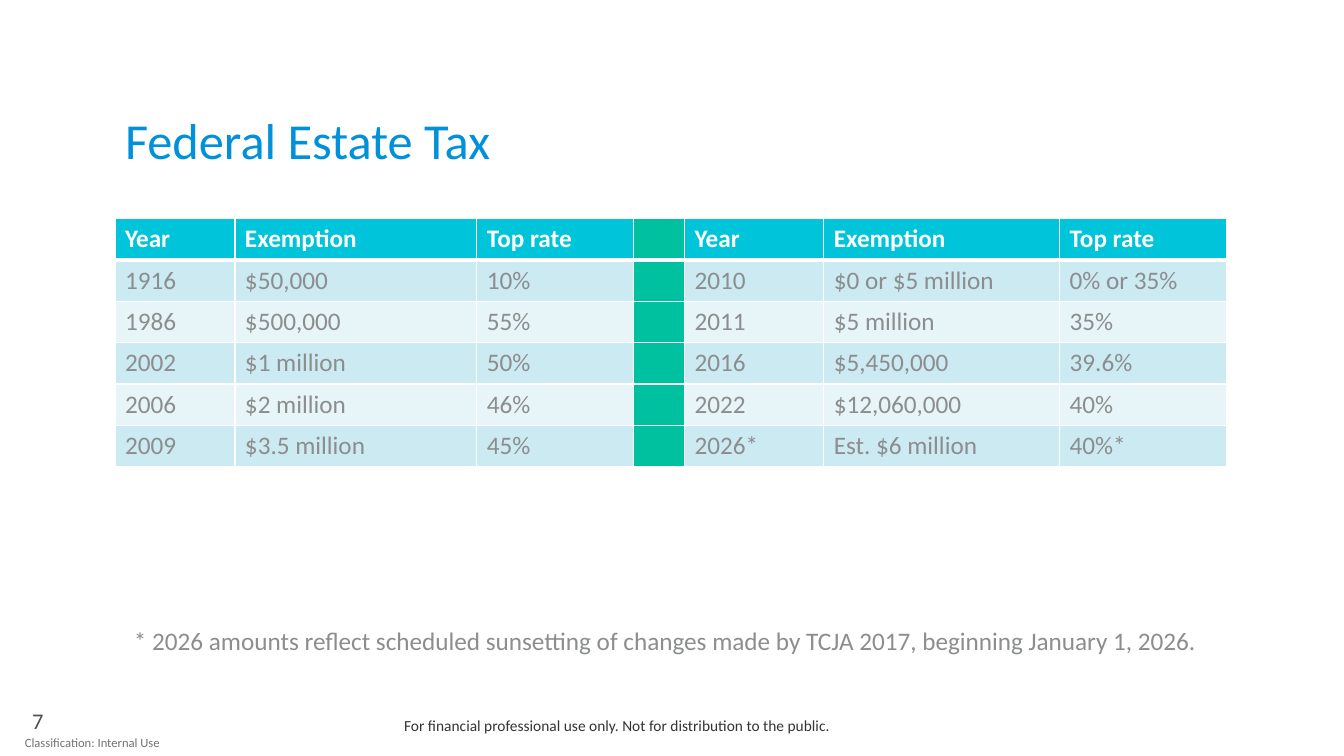
from dataclasses import dataclass

from lxml.etree import SubElement
from pptx import Presentation
from pptx.dml.color import RGBColor
from pptx.enum.text import MSO_ANCHOR as Anchor, MSO_AUTO_SIZE as AutoSize, PP_ALIGN as Align
from pptx.oxml.ns import qn
from pptx.util import Emu, Pt

EMU_PER_PX = 9144


def px(length: int) -> Emu:
    return Emu(length * EMU_PER_PX)


@dataclass(frozen=True)
class Theme:
    font: str = "Calibri"
    title: str = "0091DA"
    body: str = "8C8D8E"
    header_fill: str = "00C4D9"
    divider_fill: str = "00C19F"
    band_fills: tuple[str, str] = ("CCEAF1", "E7F5F8")
    white: str = "FFFFFF"
    page_number: str = "4D4E53"
    disclaimer: str = "333333"
    classification: str = "737373"
    title_size: int = 36
    body_size: int = 18
    page_number_size: int = 16
    disclaimer_size: int = 11
    classification_size: int = 9


THEME = Theme()


@dataclass(frozen=True)
class Label:
    text: str
    left: int
    top: int
    width: int
    height: int
    size: int
    color: str
    anchor: Anchor = Anchor.TOP
    align: Align = Align.LEFT
    wrap: bool = True
    inset: bool = True


LABELS = (
    Label("Classification: Internal Use", 0, 723, 183, 27, THEME.classification_size,
          THEME.classification, Anchor.MIDDLE, Align.CENTER, inset=False),
    Label("7", 22, 695, 56, 40, THEME.page_number_size, THEME.page_number, Anchor.MIDDLE),
    Label("* 2026 amounts reflect scheduled sunsetting of changes made by TCJA 2017, "
          "beginning January 1, 2026.", 123, 615, 1088, 40, THEME.body_size, THEME.body,
          wrap=False),
    Label("For financial professional use only. Not for distribution to the public.",
          391, 706, 667, 29, THEME.disclaimer_size, THEME.disclaimer),
)

HEADINGS = ("Year", "Exemption", "Top rate")
EARLIER_YEARS = (
    ("1916", "$50,000", "10%"),
    ("1986", "$500,000", "55%"),
    ("2002", "$1 million", "50%"),
    ("2006", "$2 million", "46%"),
    ("2009", "$3.5 million", "45%"),
)
LATER_YEARS = (
    ("2010", "$0 or $5 million", "0% or 35%"),
    ("2011", "$5 million", "35%"),
    ("2016", "$5,450,000", "39.6%"),
    ("2022", "$12,060,000", "40%"),
    ("2026*", "Est. $6 million", "40%*"),
)
COLUMN_WIDTHS = (119, 240, 155, 51, 138, 234, 166)
DIVIDER_COLUMN = 3
ROW_HEIGHT = 41
TABLE_LEFT, TABLE_TOP = 114, 217


def style(paragraph, size: int, color: str, bold: bool = False) -> None:
    font = paragraph.font
    font.name, font.size, font.bold = THEME.font, Pt(size), bold
    font.color.rgb = RGBColor.from_string(color)


def add_title(slide, text: str) -> None:
    title = slide.shapes.title
    title.left, title.top, title.width, title.height = px(114), px(115), px(944), px(73)
    frame = title.text_frame
    frame.text = text
    frame.vertical_anchor = Anchor.TOP
    frame.auto_size = AutoSize.NONE
    paragraph = frame.paragraphs[0]
    paragraph.alignment = Align.LEFT
    paragraph.line_spacing = 0.8
    style(paragraph, THEME.title_size, THEME.title)


def add_label(slide, label: Label) -> None:
    frame = slide.shapes.add_textbox(
        px(label.left), px(label.top), px(label.width), px(label.height)).text_frame
    frame.text = label.text
    frame.word_wrap = label.wrap
    frame.vertical_anchor = label.anchor
    if not label.inset:
        frame.margin_left = frame.margin_right = frame.margin_top = frame.margin_bottom = 0
    paragraph = frame.paragraphs[0]
    paragraph.alignment = label.align
    style(paragraph, label.size, label.color)


def add_borders(cell, row: int) -> None:
    properties = cell._tc.get_or_add_tcPr()
    widths = {"lnL": 1, "lnR": 1, "lnT": 3 if row == 1 else 1, "lnB": 3 if row == 0 else 1}
    for side, width in widths.items():
        line = SubElement(properties, qn(f"a:{side}"), w=str(Pt(width)))
        SubElement(SubElement(line, qn("a:solidFill")), qn("a:srgbClr"), val=THEME.white)


def cell_fill(row: int, column: int) -> str:
    if column == DIVIDER_COLUMN:
        return THEME.divider_fill
    return THEME.header_fill if row == 0 else THEME.band_fills[(row - 1) % 2]


def add_tax_table(slide) -> None:
    rows = [(*HEADINGS, "", *HEADINGS)]
    rows += [(*earlier, "", *later) for earlier, later in zip(EARLIER_YEARS, LATER_YEARS)]
    table = slide.shapes.add_table(
        len(rows), len(COLUMN_WIDTHS), px(TABLE_LEFT), px(TABLE_TOP),
        px(sum(COLUMN_WIDTHS)), px(ROW_HEIGHT * len(rows))).table
    for column, width in zip(table.columns, COLUMN_WIDTHS):
        column.width = px(width)
    for row, texts in enumerate(rows):
        table.rows[row].height = px(ROW_HEIGHT)
        for column, text in enumerate(texts):
            cell = table.cell(row, column)
            add_borders(cell, row)
            cell.fill.solid()
            cell.fill.fore_color.rgb = RGBColor.from_string(cell_fill(row, column))
            cell.text = text
            style(cell.text_frame.paragraphs[0], THEME.body_size,
                  THEME.white if row == 0 else THEME.body, bold=row == 0)


def main() -> None:
    presentation = Presentation()
    presentation.slide_width, presentation.slide_height = px(1333), px(750)
    slide = presentation.slides.add_slide(presentation.slide_layouts[5])
    add_title(slide, "Federal Estate Tax")
    add_tax_table(slide)
    for label in LABELS:
        add_label(slide, label)
    presentation.save("out.pptx")


if __name__ == "__main__":
    main()
